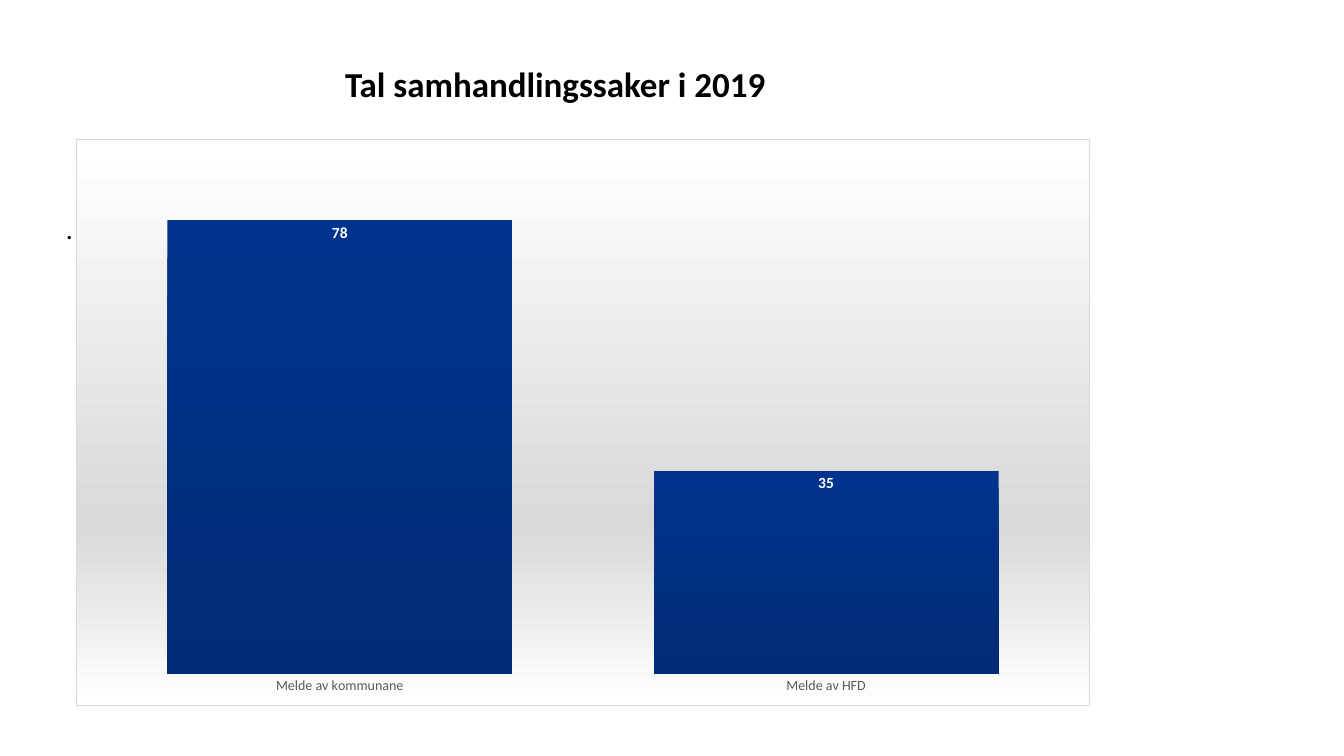
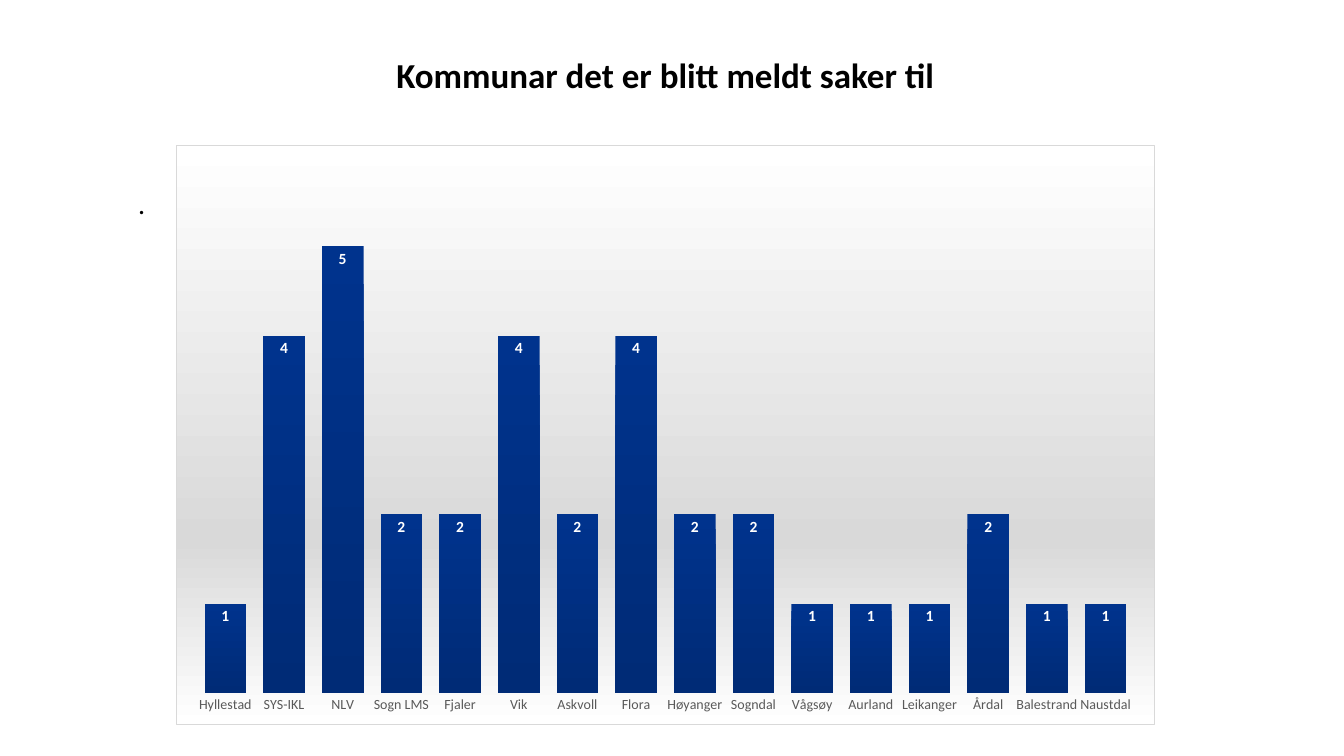
from lxml import etree
from pptx import Presentation
from pptx.chart.data import CategoryChartData
from pptx.dml.color import RGBColor
from pptx.enum.chart import XL_CHART_TYPE as ChartType
from pptx.enum.chart import XL_LABEL_POSITION as LabelPosition
from pptx.enum.chart import XL_TICK_MARK as TickMark
from pptx.enum.text import MSO_ANCHOR as Anchor
from pptx.enum.text import PP_ALIGN as Align
from pptx.oxml.ns import qn
from pptx.util import Emu, Inches, Pt

SCALE = Inches(1) / 84
FONT = "Calibri"
COLORS = {
    "text": "000000",
    "axis": "595959",
    "border": "D9D9D9",
    "bar_top": "00338D",
    "bar_bottom": "002B76",
    "label": "FFFFFF",
}
PANEL_XML = f"""
<c:spPr xmlns:c="http://schemas.openxmlformats.org/drawingml/2006/chart"
        xmlns:a="http://schemas.openxmlformats.org/drawingml/2006/main">
  <a:gradFill>
    <a:gsLst>
      <a:gs pos="0"><a:srgbClr val="FFFFFF"/></a:gs>
      <a:gs pos="68000"><a:srgbClr val="{COLORS['border']}"/></a:gs>
      <a:gs pos="100000"><a:srgbClr val="FFFFFF"/></a:gs>
    </a:gsLst>
    <a:lin ang="5400000" scaled="0"/>
  </a:gradFill>
  <a:ln w="9525"><a:solidFill><a:srgbClr val="{COLORS['border']}"/></a:solidFill></a:ln>
</c:spPr>"""

# Boxes are left, top, width, height in px
SLIDES = [
    {
        "title": "Tal samhandlingssaker i 2019",
        "title_box": (76, 67, 959, 79),
        "body_box": (66, 215, 959, 480),
        "chart_box": (76, 139, 1014, 567),
        "axis_max": 90,
        "cases": {"Melde av kommunane": 78, "Melde av HFD": 35},
    },
    {
        "title": "Kommunar det er blitt meldt saker til",
        "title_box": (176, 58, 979, 79),
        "body_box": (138, 190, 955, 516),
        "chart_box": (176, 145, 979, 580),
        "axis_max": 6,
        "cases": {
            "Hyllestad": 1, "SYS-IKL": 4, "NLV": 5, "Sogn LMS": 2,
            "Fjaler": 2, "Vik": 4, "Askvoll": 2, "Flora": 4,
            "Høyanger": 2, "Sogndal": 2, "Vågsøy": 1, "Aurland": 1,
            "Leikanger": 1, "Årdal": 2, "Balestrand": 1, "Naustdal": 1,
        },
    },
]


def style_font(font, size, color, bold=False):
    font.name = FONT
    font.size = Pt(size)
    font.bold = bold
    font.color.rgb = RGBColor.from_string(COLORS[color])


def add_text(page, area, text, size, line_height, align, bold=False):
    box = page.shapes.add_textbox(*[Emu(round(n * SCALE)) for n in area])
    frame = box.text_frame
    frame.word_wrap = True
    frame.vertical_anchor = Anchor.TOP
    frame.margin_left = frame.margin_right = 0
    frame.margin_top = frame.margin_bottom = 0
    para = frame.paragraphs[0]
    para.alignment = align
    para.line_spacing = Pt(line_height)
    span = para.add_run()
    span.text = text
    style_font(span.font, size, "text", bold)


deck = Presentation()
deck.slide_width = Emu(round(1344 * SCALE))
deck.slide_height = Emu(round(756 * SCALE))

for content in SLIDES:
    page = deck.slides.add_slide(deck.slide_layouts[6])
    add_text(page, content["body_box"], ".", 24, 26, Align.LEFT)
    add_text(page, content["title_box"], content["title"], 30, 32, Align.CENTER, True)

    data = CategoryChartData()
    data.categories = list(content["cases"])
    data.add_series("Series 1", list(content["cases"].values()))
    area = [Emu(round(n * SCALE)) for n in content["chart_box"]]
    chart = page.shapes.add_chart(ChartType.COLUMN_CLUSTERED, *area, data).chart
    chart.has_legend = False
    chart.has_title = False
    style_font(chart.font, 10, "text")
    chart.element.find(qn("c:chart")).addnext(etree.fromstring(PANEL_XML))

    category_axis = chart.category_axis
    category_axis.major_tick_mark = TickMark.NONE
    category_axis.format.line.fill.background()
    style_font(category_axis.tick_labels.font, 12, "axis")

    value_axis = chart.value_axis
    value_axis.minimum_scale = 0
    value_axis.maximum_scale = content["axis_max"]
    value_axis.has_major_gridlines = False
    value_axis.visible = False

    plot = chart.plots[0]
    plot.gap_width = 41
    plot.vary_by_categories = False
    series = plot.series[0]
    fill = series.format.fill
    fill.gradient()
    fill.gradient_angle = 270
    for stop, color in zip(fill.gradient_stops, ("bar_top", "bar_bottom")):
        stop.color.rgb = RGBColor.from_string(COLORS[color])

    labels = series.data_labels
    labels.show_value = True
    labels.position = LabelPosition.INSIDE_END
    style_font(labels.font, 13.3, "label", True)

deck.save("out.pptx")
